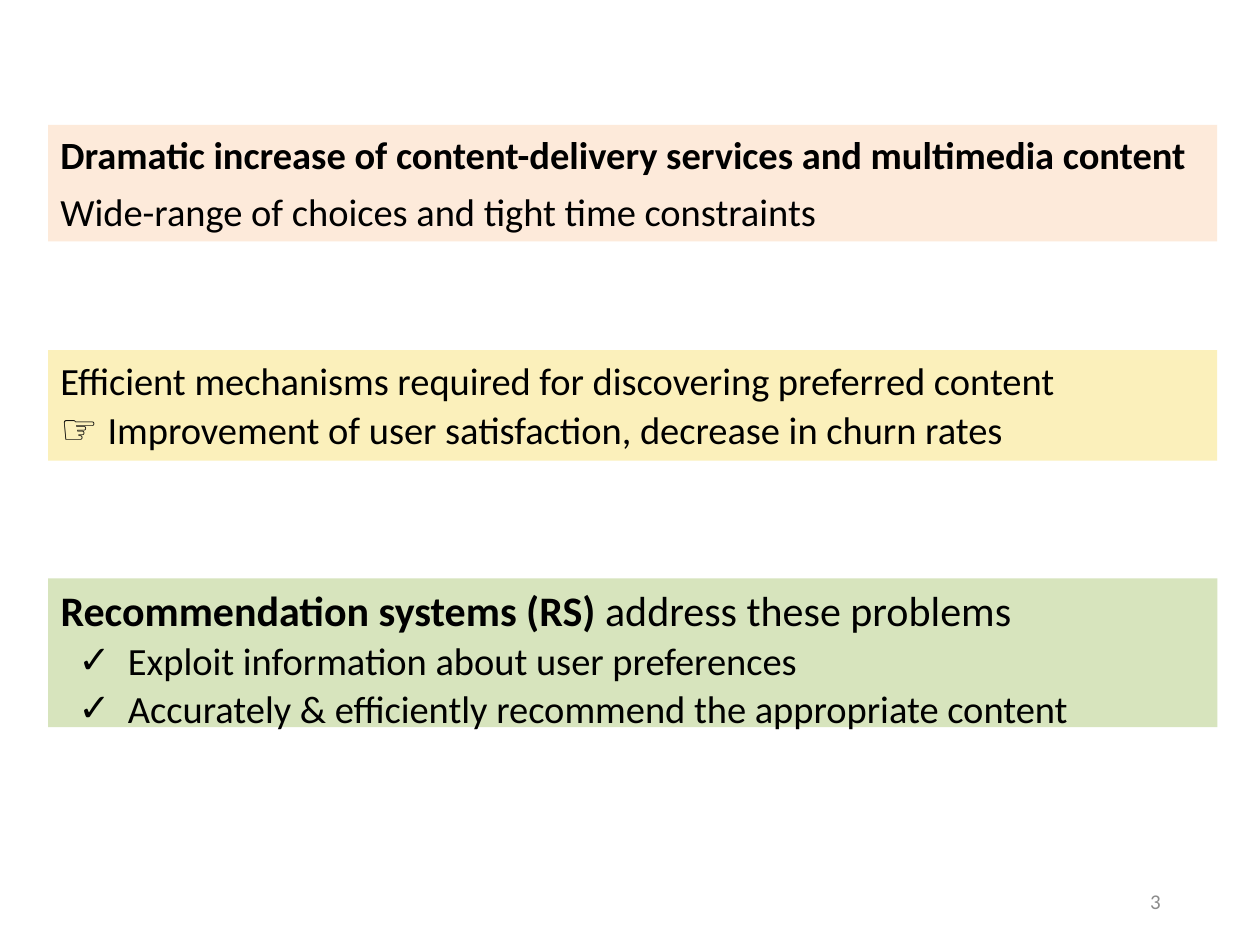
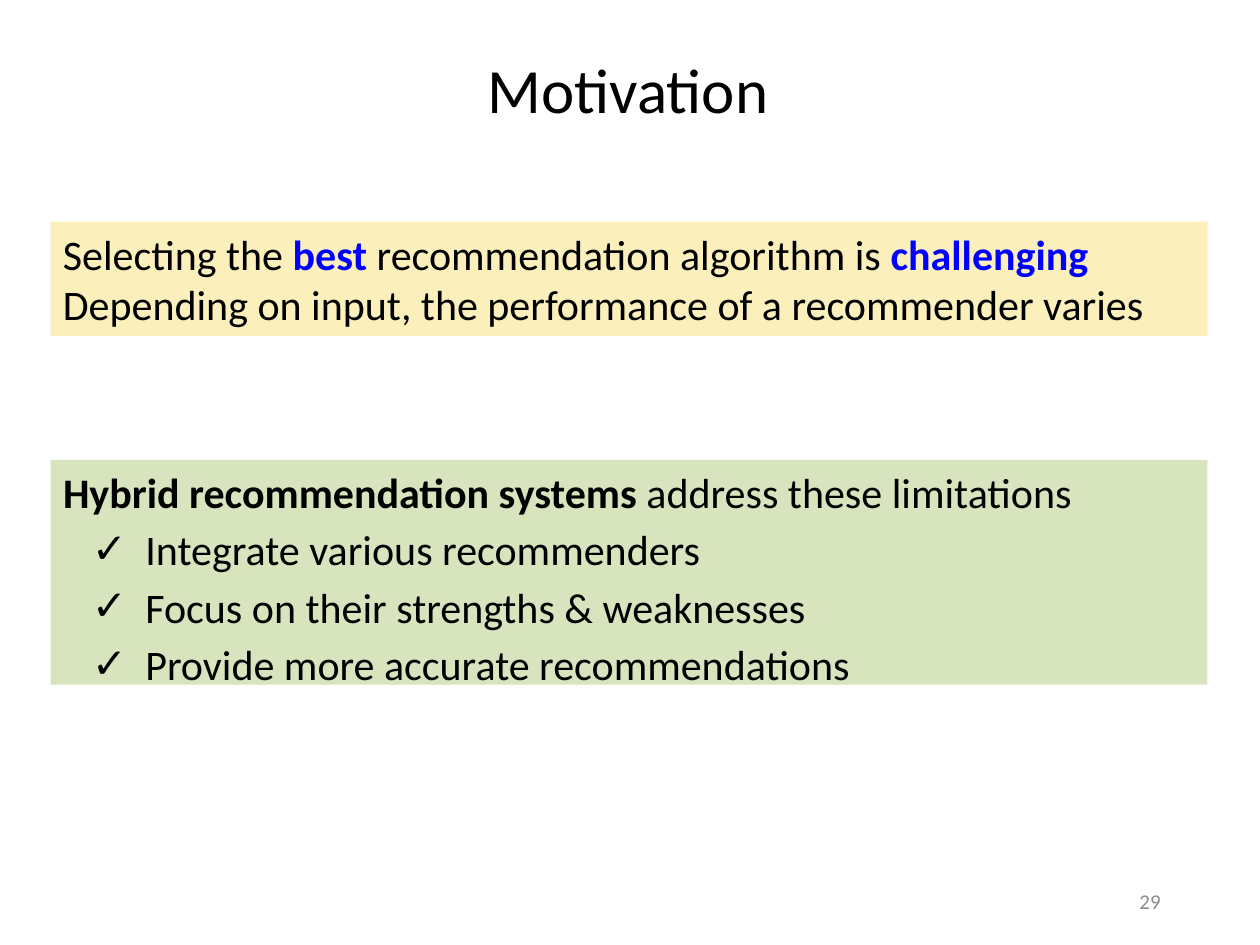
from lxml import etree
from pptx import Presentation
from pptx import util as u
from pptx.dml.color import RGBColor
from pptx.enum import shapes, text
from pptx.oxml.ns import qn

COLOURS = {
    "text": "000000",
    "accent": "0000FF",
    "number": "8C8C8C",
    "trend": "FDEADA",
    "need": "FBF0BB",
    "solution": "D7E4BD",
}
FONT = "Calibri"
BOLD = {"bold": True}
ACCENT = {"bold": True, "colour": "accent"}
TITLE_AND_CONTENT = 1


def colour(name):
    return RGBColor.from_string(COLOURS[name])


def set_attributes(target, values):
    for name, value in values.items():
        setattr(target, name, value)


def place(shape, left, top, width, height):
    set_attributes(shape, {"left": u.Cm(left), "top": u.Cm(top),
                           "width": u.Cm(width), "height": u.Cm(height)})


def add_run(paragraph, words, size, style):
    run = paragraph.add_run()
    run.text = words
    values = {"name": FONT, "size": u.Pt(size), "bold": False, **style}
    run.font.color.rgb = colour(values.pop("colour", "text"))
    set_attributes(run.font, values)


def set_bullet(paragraph, mark=None, margin=0, hanging=0):
    properties = paragraph._p.get_or_add_pPr()
    properties.set("marL", str(u.Cm(margin)))
    properties.set("indent", str(-u.Cm(hanging)))
    if mark:
        etree.SubElement(properties, qn("a:buFont")).set("typeface", FONT)
        etree.SubElement(properties, qn("a:buChar")).set("char", mark)
    else:
        etree.SubElement(properties, qn("a:buNone"))


def write(frame, lines, size, align=text.PP_ALIGN.LEFT):
    for index, line in enumerate(lines):
        paragraph = frame.paragraphs[0] if index == 0 else frame.add_paragraph()
        set_attributes(paragraph, {"alignment": align,
                                   "space_before": u.Pt(line.get("before", 0))})
        set_bullet(paragraph, **line.get("bullet", {}))
        for words, style in line["runs"]:
            add_run(paragraph, words, line.get("size", size), style)


def format_frame(frame, anchor=text.MSO_ANCHOR.TOP, fit=text.MSO_AUTO_SIZE.NONE):
    set_attributes(frame, {
        "word_wrap": True, "auto_size": fit, "vertical_anchor": anchor,
        "margin_left": u.Cm(0.25), "margin_right": u.Cm(0.25),
        "margin_top": u.Cm(0.13), "margin_bottom": u.Cm(0.13)})


def fill_panel(shape, fill, box, lines, size):
    place(shape, *box)
    shape.fill.solid()
    shape.fill.fore_color.rgb = colour(fill)
    shape.line.fill.background()
    format_frame(shape.text_frame, fit=text.MSO_AUTO_SIZE.SHAPE_TO_FIT_TEXT)
    write(shape.text_frame, lines, size)


def add_panel(slide, fill, box, lines, size):
    shape = slide.shapes.add_shape(shapes.MSO_SHAPE.RECTANGLE, 0, 0, 0, 0)
    shape.shadow.inherit = False
    fill_panel(shape, fill, box, lines, size)


def set_title(slide, words):
    title = slide.shapes.title
    place(title, 2.46, 0.89, 20.4, 1.8)
    format_frame(title.text_frame)
    write(title.text_frame, [{"runs": [(words, {})]}], 36, text.PP_ALIGN.CENTER)


def add_slide_number(slide, number):
    box = slide.shapes.add_textbox(0, 0, 0, 0)
    place(box, 17.93, 17.65, 5.72, 1.02)
    format_frame(box.text_frame, anchor=text.MSO_ANCHOR.MIDDLE)
    write(box.text_frame, [{"runs": [(str(number), {"colour": "number"})]}],
          12, text.PP_ALIGN.RIGHT)


def plain(words, **options):
    return {"runs": [(words, {})], **options}


def checklist(items, margin, hanging, **options):
    bullet = {"mark": "✓", "margin": margin, "hanging": hanging}
    return [plain(item, bullet=bullet, **options) for item in items]


def build_problem_slide(presentation):
    slide = presentation.slides.add_slide(presentation.slide_layouts[TITLE_AND_CONTENT])
    title = slide.shapes.title._element
    title.getparent().remove(title)
    left, width = 0.97, 23.57
    add_panel(slide, "trend", (left, 2.52, width, 2.35), [
        {"runs": [("Dramatic increase of content-delivery services and multimedia content", BOLD)]},
        plain("Wide-range of choices and tight time constraints", before=6),
    ], 22)
    add_panel(slide, "need", (left, 7.06, width, 2.23), [
        plain("Efficient mechanisms required for discovering preferred content"),
        {"runs": [("☞ ", {"size": u.Pt(24)}),
                  ("Improvement of user satisfaction, decrease in churn rates", {})]},
    ], 22)
    fill_panel(slide.placeholders[1], "solution", (left, 11.66, width, 3.25), [
        {"runs": [("Recommendation systems (RS) ", BOLD), ("address these problems", {})],
         "size": 24},
        *checklist(["Exploit information about user preferences",
                    "Accurately & efficiently recommend the appropriate content"],
                   1.36, 1, before=1),
    ], 22)
    add_slide_number(slide, 3)


def build_motivation_slide(presentation):
    slide = presentation.slides.add_slide(presentation.slide_layouts[TITLE_AND_CONTENT])
    set_title(slide, "Motivation")
    left, width = 1.02, 23.32
    add_panel(slide, "need", (left, 4.47, width, 2.31), [
        {"runs": [("Selecting the ", {}), ("best", ACCENT),
                  (" recommendation algorithm is ", {}), ("challenging", ACCENT)]},
        plain("Depending on input, the performance of a recommender varies"),
    ], 24)
    fill_panel(slide.placeholders[1], "solution", (left, 9.27, width, 4.78), [
        {"runs": [("Hybrid recommendation systems ", BOLD), ("address these limitations", {})]},
        *checklist(["Integrate various recommenders",
                    "Focus on their strengths & weaknesses",
                    "Provide more accurate recommendations"],
                   1.66, 1.08, before=4),
    ], 24)
    add_slide_number(slide, 29)


def main():
    presentation = Presentation()
    set_attributes(presentation, {"slide_width": u.Cm(25.4), "slide_height": u.Cm(19.05)})
    build_problem_slide(presentation)
    build_motivation_slide(presentation)
    presentation.save("out.pptx")


if __name__ == "__main__":
    main()
